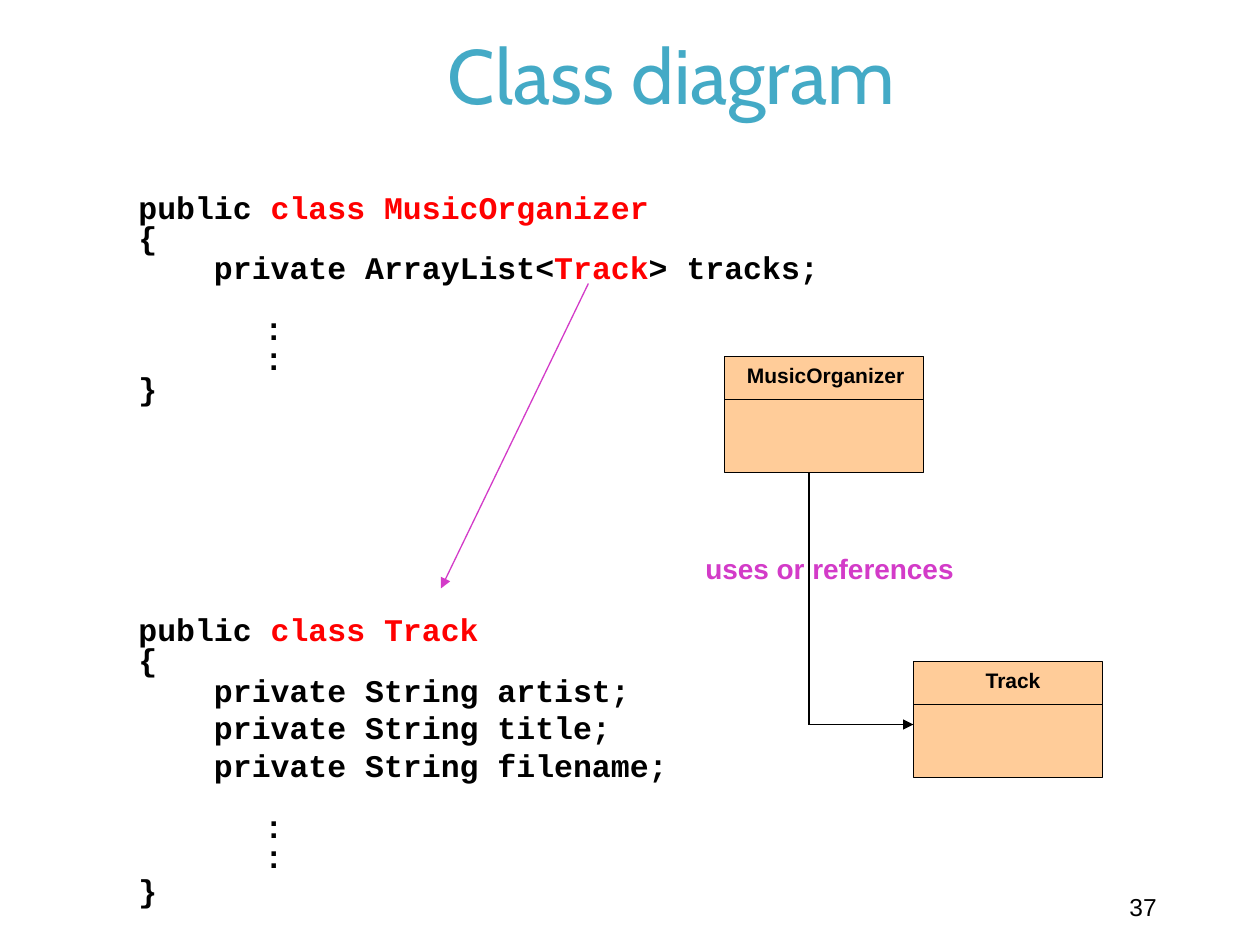
"""Build the class diagram slide for MusicOrganizer and Track."""
from dataclasses import dataclass

from lxml import etree
from pptx import Presentation
from pptx.dml.color import RGBColor
from pptx.enum.shapes import MSO_CONNECTOR, MSO_SHAPE
from pptx.enum.text import MSO_ANCHOR, PP_ALIGN
from pptx.oxml.ns import qn
from pptx.util import Inches, Pt

STRAIGHT = MSO_CONNECTOR.STRAIGHT
RECTANGLE = MSO_SHAPE.RECTANGLE
MIDDLE, TOP = MSO_ANCHOR.MIDDLE, MSO_ANCHOR.TOP
LEFT, CENTER, RIGHT = PP_ALIGN.LEFT, PP_ALIGN.CENTER, PP_ALIGN.RIGHT


@dataclass(frozen=True)
class Theme:
    """Colours, fonts and type sizes of the slide."""
    black: str = "000000"
    white: str = "FFFFFF"
    title: str = "44AAC6"
    keyword: str = "FF0000"
    accent: str = "D33BC8"
    class_fill: str = "FFCC99"
    title_font: str = "Cabin"
    body_font: str = "Arial"
    code_font: str = "Courier New"
    title_size: int = 44
    code_size: int = 18
    label_size: int = 16
    number_size: int = 14
    class_size: int = 12


THEME = Theme()
TITLE = "Class diagram"
SLIDE_NUMBER = "37"
RELATION = "uses or references"
TIGHT, SINGLE = 0.8, 1.0
BLANK_LINE = 17.2
TAB_STOP = 1.0

# Each code line: (text, highlighted text, text after), line spacing, space before, indent
CODE = [
    (("public ", "class MusicOrganizer", ""), TIGHT, 0, 0),
    (("{", "", ""), TIGHT, 0, 0),
    (("    private ArrayList<", "Track", "> tracks;"), TIGHT, 0, 0),
    ((":", "", ""), TIGHT, BLANK_LINE, TAB_STOP),
    ((":", "", ""), TIGHT, 0, TAB_STOP),
    (("}", "", ""), TIGHT, 0, 0),
    (("public ", "class Track", ""), TIGHT, 7 * BLANK_LINE, 0),
    (("{", "", ""), TIGHT, 0, 0),
    (("    private String artist;", "", ""), TIGHT, 0, 0),
    (("    private String title;", "", ""), SINGLE, 0, 0),
    (("    private String filename;", "", ""), SINGLE, 0, 0),
    ((":", "", ""), TIGHT, BLANK_LINE, TAB_STOP),
    ((":", "", ""), TIGHT, 0, TAB_STOP),
    (("}", "", ""), TIGHT, 2, 0),
]
CLASSES = [
    ("MusicOrganizer", 5.75, 2.83, 1.58, LEFT),
    ("Track", 7.25, 5.25, 1.5, CENTER),
]
CLASS_HEIGHT, HEADER_HEIGHT = 0.92, 0.34
LINES = [
    ((6.42, 3.75), (6.42, 5.75), THEME.black, 1, False),
    ((6.42, 5.75), (7.25, 5.75), THEME.black, 1, True),
    ((4.67, 2.25), (3.5, 4.67), THEME.accent, 0.75, True),
]


def color(value):
    """Turn a hex string into a colour."""
    return RGBColor.from_string(value)


def style(font, name, size, value, bold=False):
    """Set the face, size, colour and weight of a font."""
    font.name, font.size, font.bold = name, Pt(size), bold
    font.color.rgb = color(value)


def add_box(slide, left, top, width, height, fill=None, outline=None):
    """Add a rectangle with the given fill and outline."""
    shape = slide.shapes.add_shape(
        RECTANGLE, Inches(left), Inches(top), Inches(width), Inches(height))
    shape.shadow.inherit = False
    shape.fill.solid()
    shape.fill.fore_color.rgb = color(fill)
    if outline:
        shape.line.color.rgb = color(outline)
        shape.line.width = Pt(0.75)
    else:
        shape.line.fill.background()
    return shape


def add_text_box(slide, left, top, width, height):
    """Add a wrapping text box and return its frame."""
    frame = slide.shapes.add_textbox(
        Inches(left), Inches(top), Inches(width), Inches(height)).text_frame
    frame.word_wrap = True
    frame.vertical_anchor = TOP
    return frame


def write(frame, text, name, size, value, bold=False, alignment=LEFT):
    """Write one styled paragraph into a frame."""
    paragraph = frame.paragraphs[0]
    paragraph.text, paragraph.alignment = text, alignment
    style(paragraph.font, name, size, value, bold)


def add_line(slide, start, end, value, width, arrow=False):
    """Add a straight line, with an arrowhead at its end if asked."""
    connector = slide.shapes.add_connector(
        STRAIGHT, *(Inches(length) for length in (*start, *end)))
    connector.line.color.rgb = color(value)
    connector.line.width = Pt(width)
    if arrow:
        line = connector.line._get_or_add_ln()
        etree.SubElement(line, qn("a:tailEnd"), type="triangle")
    etree.SubElement(connector._element.spPr, qn("a:effectLst"))


def add_code(slide):
    """Write both class listings, with highlighted names."""
    frame = add_text_box(slide, 1, 1.5, 5.67, 5.73)
    for index, (parts, spacing, before, indent) in enumerate(CODE):
        paragraph = frame.add_paragraph() if index else frame.paragraphs[0]
        paragraph.line_spacing = spacing
        paragraph.space_before = Pt(before)
        if indent:
            paragraph._p.get_or_add_pPr().set("marL", str(Inches(indent)))
        style(paragraph.font, THEME.code_font, THEME.code_size, THEME.black, True)
        for text, value in zip(parts, (THEME.black, THEME.keyword, THEME.black)):
            if text:
                run = paragraph.add_run()
                run.text = text
                run.font.color.rgb = color(value)


def add_class(slide, name, left, top, width, alignment):
    """Draw a class box with its name above a dividing line."""
    add_box(slide, left, top, width, CLASS_HEIGHT, THEME.class_fill, THEME.black)
    frame = add_text_box(slide, left + 0.08, top, width - 0.08, 0.3)
    write(frame, name, THEME.body_font, THEME.class_size, THEME.black, True, alignment)
    divider = top + HEADER_HEIGHT
    add_line(slide, (left, divider), (left + width, divider), THEME.black, 0.75)


def main():
    """Build and save the slide."""
    presentation = Presentation()
    presentation.slide_width, presentation.slide_height = Inches(10), Inches(7.5)
    slide = presentation.slides.add_slide(presentation.slide_layouts[6])

    number = add_text_box(slide, 8.75, 7.03, 0.58, 0.33)
    number.margin_right = Inches(0.15)
    write(number, SLIDE_NUMBER, THEME.body_font, THEME.number_size, THEME.black,
          alignment=RIGHT)

    title = add_box(slide, 1.08, 0.25, 8.5, 0.67, THEME.white).text_frame
    title.word_wrap = True
    title.vertical_anchor = MIDDLE
    write(title, TITLE, THEME.title_font, THEME.title_size, THEME.title,
          alignment=CENTER)

    add_code(slide)
    for entry in CLASSES:
        add_class(slide, *entry)
    for line in LINES:
        add_line(slide, *line)

    relation = add_text_box(slide, 5.5, 4.33, 2.33, 0.37)
    write(relation, RELATION, THEME.body_font, THEME.label_size, THEME.accent, True)

    presentation.save("out.pptx")


if __name__ == "__main__":
    main()
